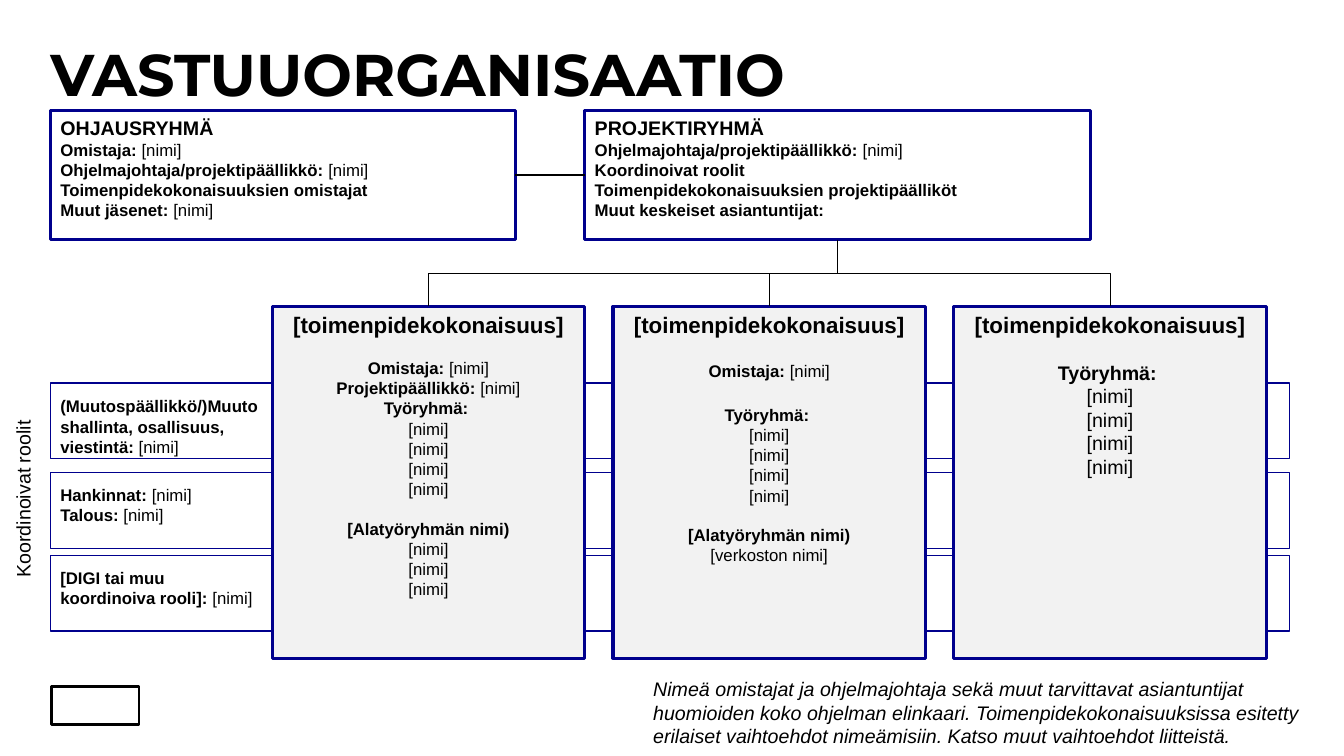
"""Builds the VASTUUORGANISAATIO slide: steering group, project group, work packages and coordinating roles."""
from lxml.etree import SubElement
from pptx import Presentation
from pptx.dml.color import RGBColor
from pptx.enum.shapes import MSO_CONNECTOR, MSO_SHAPE
from pptx.enum.text import MSO_ANCHOR, MSO_AUTO_SIZE, PP_ALIGN
from pptx.oxml.ns import qn
from pptx.util import Emu, Pt

PX = 9144
COLORS = {"ink": "000000", "navy": "00008D", "paper": "FFFFFF", "card": "F2F2F2"}
RGB = {name: RGBColor.from_string(value) for name, value in COLORS.items()}
FRAME = {"word_wrap": True, "vertical_anchor": MSO_ANCHOR.TOP}
NAME = (12, 0, "", "[nimi]")


def write(tf, lines, align=PP_ALIGN.LEFT, italic=False):
    for key, value in FRAME.items():
        setattr(tf, key, value)
    for i, (size, before, bold, plain) in enumerate(lines):
        p = tf.add_paragraph() if i else tf.paragraphs[0]
        p.alignment, p.space_before = align, Pt(before)
        for text, weight in ((bold, True), (plain, False)):
            if text:
                r = p.add_run()
                r.text = text
                r.font.color.rgb = RGB["ink"]
                fmt = {"name": "Arial", "size": Pt(size), "bold": weight, "italic": italic}
                for key, value in fmt.items():
                    setattr(r.font, key, value)


def box(x, y, w, h, fill="paper", line="navy", weight=2.25):
    sp = s.shapes.add_shape(MSO_SHAPE.RECTANGLE, *(Emu(v * PX) for v in (x, y, w, h)))
    sp.shadow.inherit = False
    sp.fill.solid()
    sp.fill.fore_color.rgb = RGB[fill]
    sp.line.color.rgb = RGB[line]
    sp.line.width = Pt(weight)
    return sp


prs = Presentation()
prs.slide_width, prs.slide_height = Emu(1333 * PX), Emu(750 * PX)
s = prs.slides.add_slide(prs.slide_layouts[5])

title = s.shapes.title
for key, value in {"left": 50, "top": 45, "width": 1229, "height": 86}.items():
    setattr(title, key, Emu(value * PX))
tf = title.text_frame
write(tf, [(42, 0, "VASTUUORGANISAATIO", "")])
tf.paragraphs[0].line_spacing = 0.9
tf.paragraphs[0].runs[0].font.name = "Montserrat"
tf.auto_size = MSO_AUTO_SIZE.NONE
for side in ("left", "top", "right", "bottom"):
    setattr(tf, f"margin_{side}", 0)

box(51, 681, 87, 38, line="ink", weight=2)

for y in (551, 469, 380):
    box(50, y, 1229, 75, weight=1)

steering = box(50, 110, 461, 128)
write(steering.text_frame, [
    (14, 0, "OHJAUSRYHMÄ", ""),
    (12, 0, "Omistaja: ", "[nimi]"),
    (12, 0, "Ohjelmajohtaja/projektipäällikkö: ", "[nimi]"),
    (12, 0, "Toimenpidekokonaisuuksien omistajat", ""),
    (12, 0, "Muut jäsenet: ", "[nimi]"),
])
project = box(580, 110, 502, 128)
write(project.text_frame, [
    (14, 0, "PROJEKTIRYHMÄ", ""),
    (12, 0, "Ohjelmajohtaja/projektipäällikkö: ", "[nimi]"),
    (12, 0, "Koordinoivat roolit", ""),
    (12, 0, "Toimenpidekokonaisuuksien projektipäälliköt", ""),
    (12, 0, "Muut keskeiset asiantuntijat:", ""),
])

packages = [
    [(12, 14, "Omistaja: ", "[nimi]"), (12, 0, "Projektipäällikkö: ", "[nimi]"),
     (12, 0, "Työryhmä: ", ""), *[NAME] * 4,
     (12, 14, "[Alatyöryhmän nimi)", ""), *[NAME] * 3],
    [(12, 16, "Omistaja: ", "[nimi]"), (12, 17, "Työryhmä: ", ""), *[NAME] * 4,
     (12, 14, "[Alatyöryhmän nimi)", ""), (12, 0, "", "[verkoston nimi]")],
    [(14, 16, "Työryhmä: ", ""), *[(14, 0, "", "[nimi]")] * 4],
]
links = []
for i, lines in enumerate(packages):
    x = 270 + 338 * i
    card = box(x, 304, 310, 349, fill="card")
    write(card.text_frame, [(16, 0, "[toimenpidekokonaisuus]", ""), *lines], PP_ALIGN.CENTER)
    start, end = 831, x + 155
    mid, half = (start + end) // 2, (start - end) // 2
    ends = (mid - 33, 271 - half, mid + 33, 271 + half)
    link = s.shapes.add_connector(MSO_CONNECTOR.ELBOW, *(Emu(v * PX) for v in ends))
    link._element.spPr.find(qn("a:xfrm")).set("rot", "5400000")
    links.append((link, 0.5))

bridge = s.shapes.add_connector(MSO_CONNECTOR.STRAIGHT, 0, 0, 0, 0)
bridge.begin_connect(project, 1)
bridge.end_connect(steering, 3)
links.append((bridge, 1.5))
for link, weight in links:
    link.line.color.rgb = RGB["ink"]
    link.line.width = Pt(weight)
    SubElement(link._element.spPr, qn("a:effectLst"))

notes = [
    (50, 388, 220, 71, False,
     [(12, 0, "(Muutospäällikkö/)Muutoshallinta, osallisuus, viestintä: ", "[nimi]")]),
    (50, 476, 220, 50, False,
     [(12, 0, "Hankinnat: ", "[nimi]"), (12, 0, "Talous: ", "[nimi]")]),
    (50, 558, 220, 50, False, [(12, 0, "[DIGI tai muu koordinoiva rooli]: ", "[nimi]")]),
    (638, 667, 678, 81, True,
     [(14, 0, "", "Nimeä omistajat ja ohjelmajohtaja sekä muut tarvittavat asiantuntijat "
       "huomioiden koko ohjelman elinkaari. Toimenpidekokonaisuuksissa esitetty "
       "erilaiset vaihtoehdot nimeämisiin. Katso muut vaihtoehdot liitteistä.")]),
    (6, 361, 44, 222, False, [(14, 0, "", "Koordinoivat roolit")]),
]
for x, y, w, h, italic, lines in notes:
    sp = s.shapes.add_textbox(*(Emu(v * PX) for v in (x, y, w, h)))
    write(sp.text_frame, lines, italic=italic)
    sp.text_frame.auto_size = MSO_AUTO_SIZE.SHAPE_TO_FIT_TEXT
sp.text_frame._txBody.bodyPr.set("vert", "vert270")

prs.save("out.pptx")
